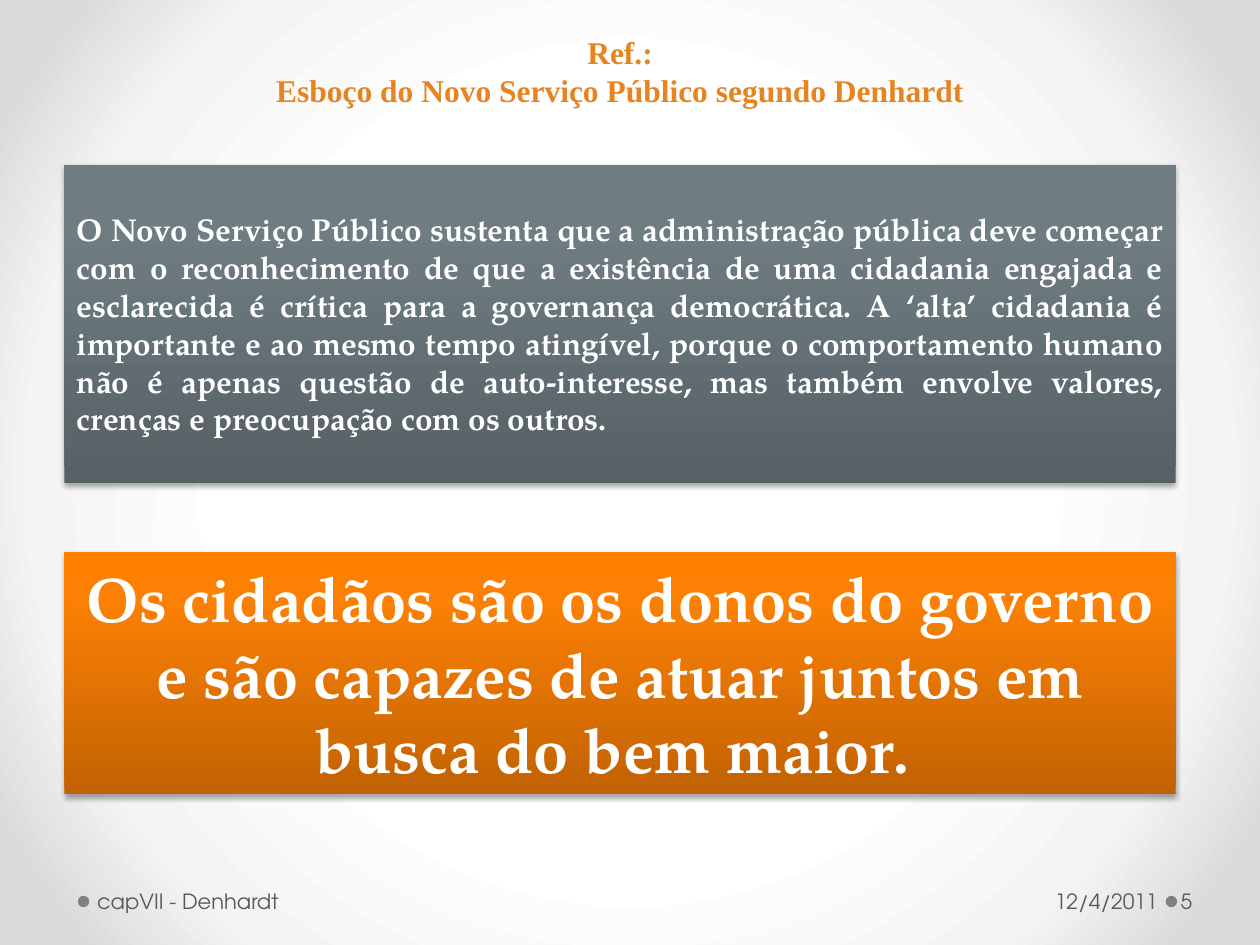
import pptx
import pptx.util
import pptx.oxml
import pptx.oxml.ns
import pptx.dml.color
import pptx.enum.shapes
import pptx.enum.text
from dataclasses import dataclass

Cm = pptx.util.Cm
Pt = pptx.util.Pt
Align = pptx.enum.text.PP_ALIGN
Shape = pptx.enum.shapes.MSO_SHAPE
qn = pptx.oxml.ns.qn
NS = pptx.oxml.ns.nsdecls("a")


@dataclass(frozen=True)
class Theme:
    serif: str = "Times New Roman"
    body: str = "TeX Gyre Pagella"
    sans: str = "TeX Gyre Adventor"
    title: str = "E68422"
    white: str = "FFFFFF"
    foot: str = "595959"
    dot: str = "808080"
    small: int = 12
    text: int = 18
    big: int = 36
    back: tuple = ((50, "FFFFFF"), (76, "F4F4F4"), (92, "DADADA"))
    slate: tuple = ((0, "566065"), (80, "6F7D83"), (100, "6F7E84"))
    orange: tuple = ((0, "C26203"), (80, "FB8004"), (100, "FF8002"))


THEME = Theme()
RADIAL = (f'<a:path {NS} path="circle"><a:fillToRect l="50000" t="50000" '
          'r="50000" b="50000"/></a:path>')
UPWARD = f'<a:lin {NS} ang="16200000" scaled="0"/>'
SHADOW = (f'<a:outerShdw {NS} blurRad="39370" dist="22860" dir="5400000" '
          'rotWithShape="0"><a:srgbClr val="000000"><a:alpha val="35000"/>'
          '</a:srgbClr></a:outerShdw>')


def rgb(color):
    return pptx.dml.color.RGBColor.from_string(color)


def shade(fill, host, stops, form):
    fill.gradient()
    grad = host.find(".//" + qn("a:gradFill"))
    for child in list(grad):
        grad.remove(child)
    marks = "".join(f'<a:gs pos="{pos * 1000}"><a:srgbClr val="{color}"/></a:gs>'
                    for pos, color in stops)
    grad.append(pptx.oxml.parse_xml(f"<a:gsLst {NS}>{marks}</a:gsLst>"))
    grad.append(pptx.oxml.parse_xml(form))


def write(frame, lines, font, size, color, align, bold=False):
    frame.word_wrap = True
    frame.auto_size = pptx.enum.text.MSO_AUTO_SIZE.NONE
    frame.vertical_anchor = pptx.enum.text.MSO_ANCHOR.MIDDLE
    frame.text = "\n".join(lines)
    for para in frame.paragraphs:
        para.alignment = align
        para.font.name = font
        para.font.size = Pt(size)
        para.font.bold = bold
        para.font.color.rgb = rgb(color)


def add_title(slide, lines):
    title = slide.shapes.title
    title.left, title.top = Cm(3.5), Cm(0.53)
    title.width, title.height = Cm(18), Cm(1.8)
    write(title.text_frame, lines, THEME.serif, THEME.text, THEME.title,
          Align.CENTER, True)


def add_panel(slide, top, height, stops, text, size, align):
    panel = slide.shapes.add_shape(Shape.RECTANGLE, Cm(1.3), Cm(top),
                                   Cm(22.4), Cm(height))
    shade(panel.fill, panel.element, stops, UPWARD)
    panel.line.fill.background()
    panel.shadow.inherit = False
    panel.element.find(".//" + qn("a:effectLst")).append(
        pptx.oxml.parse_xml(SHADOW))
    write(panel.text_frame, [text], THEME.body, size, THEME.white, align, True)


def add_dot(slide, left):
    dot = slide.shapes.add_shape(Shape.OVAL, Cm(left), Cm(18.06),
                                 Cm(0.23), Cm(0.23))
    dot.fill.solid()
    dot.fill.fore_color.rgb = rgb(THEME.dot)
    dot.line.fill.background()
    dot.shadow.inherit = False


def add_foot(slide, left, width, text, align, start, end):
    box = slide.shapes.add_textbox(Cm(left), Cm(17.65), Cm(width), Cm(1.02))
    frame = box.text_frame
    frame.margin_left, frame.margin_right = Cm(start), Cm(end)
    write(frame, [text], THEME.sans, THEME.small, THEME.foot, align)


def main():
    deck = pptx.Presentation()
    deck.slide_width, deck.slide_height = Cm(25.4), Cm(19.05)
    slide = deck.slides.add_slide(deck.slide_layouts[5])
    shade(slide.background.fill, slide.element, THEME.back, RADIAL)

    add_title(slide, ["Ref.:", "Esboço do Novo Serviço Público segundo Denhardt"])
    add_panel(slide, 3.33, 6.4, THEME.slate,
              "O Novo Serviço Público sustenta que a administração pública deve "
              "começar com o reconhecimento de que a existência de uma cidadania "
              "engajada e esclarecida é crítica para a governança democrática. "
              "A ‘alta’ cidadania é importante e ao mesmo tempo atingível, porque "
              "o comportamento humano não é apenas questão de auto-interesse, mas "
              "também envolve valores, crenças e preocupação com os outros.",
              THEME.text, Align.JUSTIFY)
    add_panel(slide, 11.13, 4.88, THEME.orange,
              "Os cidadãos são os donos do governo e são capazes de atuar juntos "
              "em busca do bem maior. ", THEME.big, Align.CENTER)

    for left in (1.57, 23.5):
        add_dot(slide, left)
    add_foot(slide, 1.83, 7.9, "capVII - Denhardt", Align.LEFT, 0.13, 0.25)
    add_foot(slide, 17.68, 5.79, "12/4/2011", Align.RIGHT, 0.25, 0.13)
    add_foot(slide, 23.72, 1.55, "5", Align.LEFT, 0.08, 0.13)
    deck.save("out.pptx")


if __name__ == "__main__":
    main()
